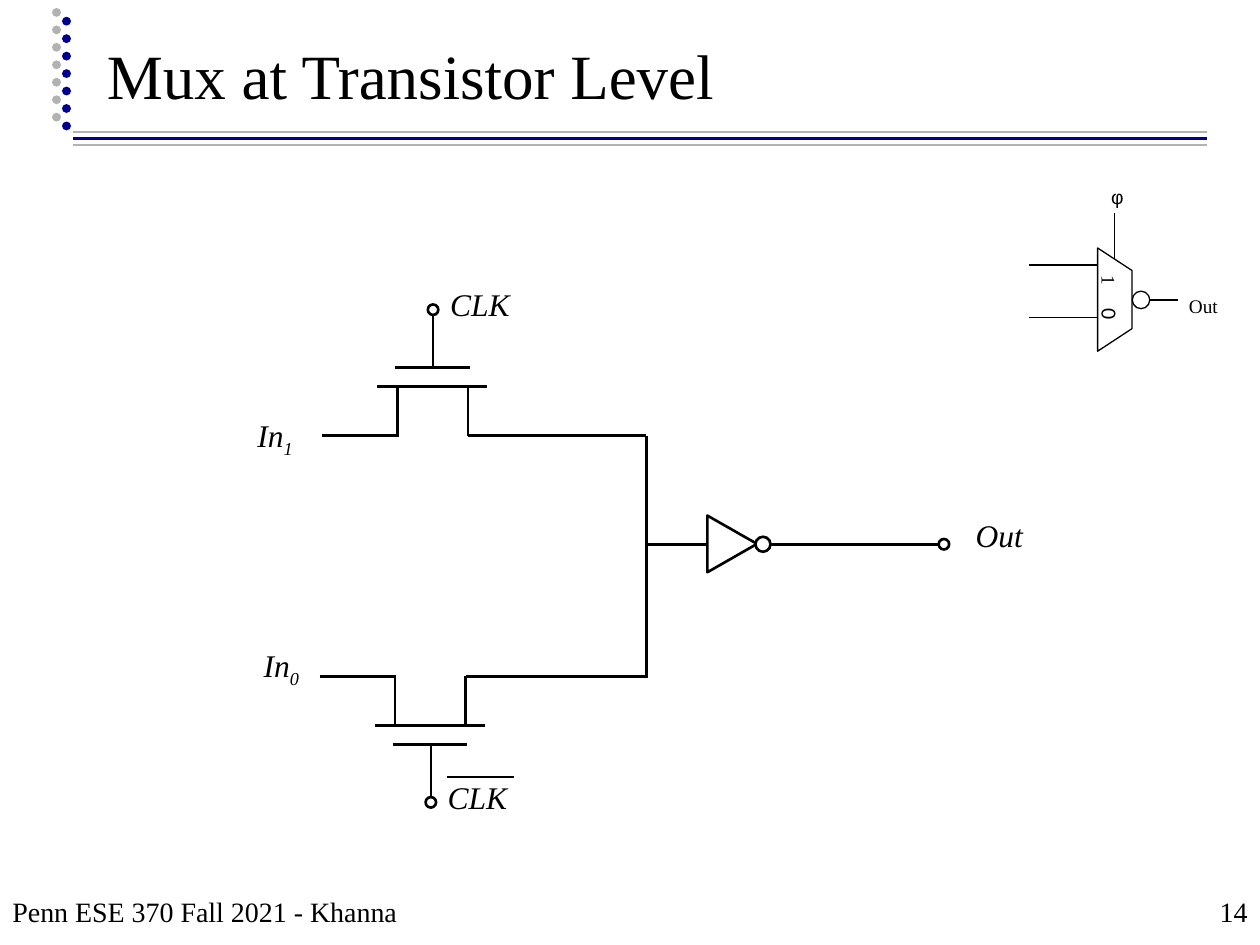
from lxml import etree
from pptx import Presentation
from pptx.dml.color import RGBColor
from pptx.enum.dml import MSO_LINE
from pptx.enum.shapes import MSO_CONNECTOR, MSO_SHAPE
from pptx.enum.text import MSO_ANCHOR, PP_ALIGN
from pptx.oxml.ns import qn
from pptx.util import Pt

LEFT, CENTER, RIGHT = PP_ALIGN.LEFT, PP_ALIGN.CENTER, PP_ALIGN.RIGHT
TOP, BOTTOM = MSO_ANCHOR.TOP, MSO_ANCHOR.BOTTOM
OVAL, TRIANGLE, TRAPEZOID = MSO_SHAPE.OVAL, MSO_SHAPE.ISOSCELES_TRIANGLE, MSO_SHAPE.TRAPEZOID
COLORS = {"ink": "000000", "paper": "FFFFFF", "navy": "000090", "gray": "B2B2B2"}
SERIF, SANS, DIGIT = "Times New Roman", "Arial", "Lato"
CIRCUIT, SYMBOL = 1.5, 0.75  # line weights


def rgb(name):
    return RGBColor.from_string(COLORS[name])


def add_line(slide, x1, y1, x2, y2, weight=CIRCUIT, color="ink"):
    line = slide.shapes.add_connector(
        MSO_CONNECTOR.STRAIGHT, Pt(x1), Pt(y1), Pt(x2), Pt(y2))
    line.line.color.rgb = rgb(color)
    line.line.width = Pt(weight)
    etree.SubElement(line.element.spPr, qn("a:effectLst"))
    return line


def add_dots(slide, x, bottom, color):
    """Vertical column of round dots, drawn upwards from its bottom."""
    dots = add_line(slide, x, bottom, x, bottom - 66, 5, color)
    dots.line.dash_style = MSO_LINE.ROUND_DOT
    dots.element.spPr.find(qn("a:ln")).set("cap", "rnd")


def add_outline(slide, kind, x, y, w, h, weight=CIRCUIT, rotation=0):
    shape = slide.shapes.add_shape(kind, Pt(x), Pt(y), Pt(w), Pt(h))
    shape.shadow.inherit = False
    shape.fill.solid()
    shape.fill.fore_color.rgb = rgb("paper")
    shape.line.color.rgb = rgb("ink")
    shape.line.width = Pt(weight)
    shape.rotation = rotation
    return shape


def add_circle(slide, cx, cy, size=6, weight=CIRCUIT):
    add_outline(slide, OVAL, cx - size / 2, cy - size / 2, size, size, weight)


def style(font, size, face=SERIF, italic=False):
    font.size, font.name, font.italic = Pt(size), face, italic
    font.color.rgb = rgb("ink")


def add_text(slide, text, x, y, w, h, size, align=LEFT, anchor=TOP,
             face=SERIF, italic=False, wrap=True):
    frame = slide.shapes.add_textbox(Pt(x), Pt(y), Pt(w), Pt(h)).text_frame
    frame.word_wrap = wrap
    frame.vertical_anchor = anchor
    paragraph = frame.paragraphs[0]
    paragraph.text = text
    paragraph.alignment = align
    style(paragraph.font, size, face, italic)
    return paragraph


def add_signal(slide, name, x, y, index=""):
    """Italic signal name with an optional subscript."""
    paragraph = add_text(slide, name, x, y, 50.4, 28.8, 18, CENTER, italic=True)
    if index:
        subscript = paragraph.add_run()
        subscript.text = index
        subscript.font.element.set("baseline", "-25000") if hasattr(
            subscript.font, "element") else subscript._r.get_or_add_rPr().set("baseline", "-25000")


def add_header(slide, x, y, w, title):
    add_line(slide, x, y, x + w, y, 2, "navy")
    for offset in (-3.6, 3.6):
        add_line(slide, x, y + offset, x + w, y + offset, 1, "gray")
    add_dots(slide, x - 9.4, y - 12.2, "gray")
    add_dots(slide, x - 3.8, y - 7.2, "navy")
    add_text(slide, title, x + 12.2, y - 71.2, 613.4, 59.8, 36, anchor=BOTTOM)


def add_footer(slide, y, w, note, number):
    add_text(slide, note, 0, y, 390, 36, 16, anchor=BOTTOM)
    add_text(slide, number, w - 150, y, 150, 36, 16, RIGHT, BOTTOM)


def add_transistor(slide, x, y, side, wire_end, clock):
    """Pass transistor on the wire from (x, y); its gate is above (side -1) or below (1)."""
    channel, gate, terminal = (y + side * d for d in (28, 39, 72))
    source, drain, middle = x + 43.2, x + 83.6, x + 63.6
    add_line(slide, x, y, source + 0.7, y)
    add_line(slide, drain, y, wire_end, y)
    for leg in (source, drain):
        add_line(slide, leg, y, leg, channel)
    add_line(slide, x + 31.8, channel, x + 94.6, channel)
    add_line(slide, x + 42, gate, x + 84.5, gate)
    add_line(slide, middle, gate, middle, terminal)
    add_circle(slide, middle, terminal)
    add_signal(slide, clock, middle + 1.5, terminal - 17.5)


def add_inverter(slide, x, y, end):
    """Inverter in the wire from (x, y) to the output terminal."""
    add_line(slide, x, y, end, y)
    add_outline(slide, TRIANGLE, x + 32.8, y - 14.4, 32.4, 28.4, rotation=90)
    add_circle(slide, x + 66.6, y, 8.6)
    add_circle(slide, end + 3, y)
    add_signal(slide, "Out", end + 9.4, y - 19.5)


def add_circuit(slide, x, y):
    bus, bottom = x + 186, y + 137.5
    add_line(slide, bus, y, bus, bottom + 1)
    add_transistor(slide, x + 0.5, y, -1, bus, "CLK")
    add_transistor(slide, x - 0.8, bottom, 1, bus, "CLK")
    add_line(slide, x + 72.2, bottom + 57.5, x + 110.4, bottom + 57.5)  # overbar
    add_inverter(slide, bus, y + 62, 536.4)
    add_signal(slide, "In", x - 51.4, y - 15, "1")
    add_signal(slide, "In", x - 47.8, y + 116.7, "0")


def add_mux_symbol(slide, x, y):
    """Multiplexer symbol; (x, y) is where the upper input starts."""
    for input_y in (y, y + 29.9):
        add_line(slide, x, input_y, x + 42, input_y, SYMBOL)
    add_line(slide, x + 49, y - 29.5, x + 49, y, SYMBOL)
    body = add_outline(slide, TRAPEZOID, x + 19.5, y + 10, 59, 19.6, SYMBOL, 90)
    body.adjustments[0] = 0.657
    frame = body.text_frame
    frame.vertical_anchor = TOP
    paragraph = frame.paragraphs[0]
    paragraph.alignment = LEFT
    for text, face in (("1\t", SERIF), ("0", DIGIT)):
        run = paragraph.add_run()
        run.text = text
        style(run.font, 11, face)
    tabs = etree.SubElement(paragraph._p.get_or_add_pPr(), qn("a:tabLst"))
    etree.SubElement(tabs, qn("a:tab"), pos=str(Pt(19)), algn="l")
    add_line(slide, x + 59, y + 20, x + 85.2, y + 20, SYMBOL)
    add_circle(slide, x + 64, y + 20, 10, SYMBOL)
    add_text(slide, "Out", x + 83.8, y + 13.4, 31.7, 20.9, 11, CENTER, wrap=False)
    add_text(slide, "φ", x + 39.8, y - 49.2, 20.2, 20.9, 11, CENTER, face=SANS, wrap=False)


def main():
    deck = Presentation()
    deck.slide_width, deck.slide_height = Pt(720), Pt(540)
    slide = deck.slides.add_slide(deck.slide_layouts[6])
    add_header(slide, 41.8, 79.2, 648, "Mux at Transistor Level")
    add_footer(slide, 498.2, 720, "Penn ESE 370 Fall 2021 - Khanna", "14")
    add_circuit(slide, 183.4, 249)
    add_mux_symbol(slide, 588, 151.4)
    deck.save("out.pptx")


if __name__ == "__main__":
    main()
